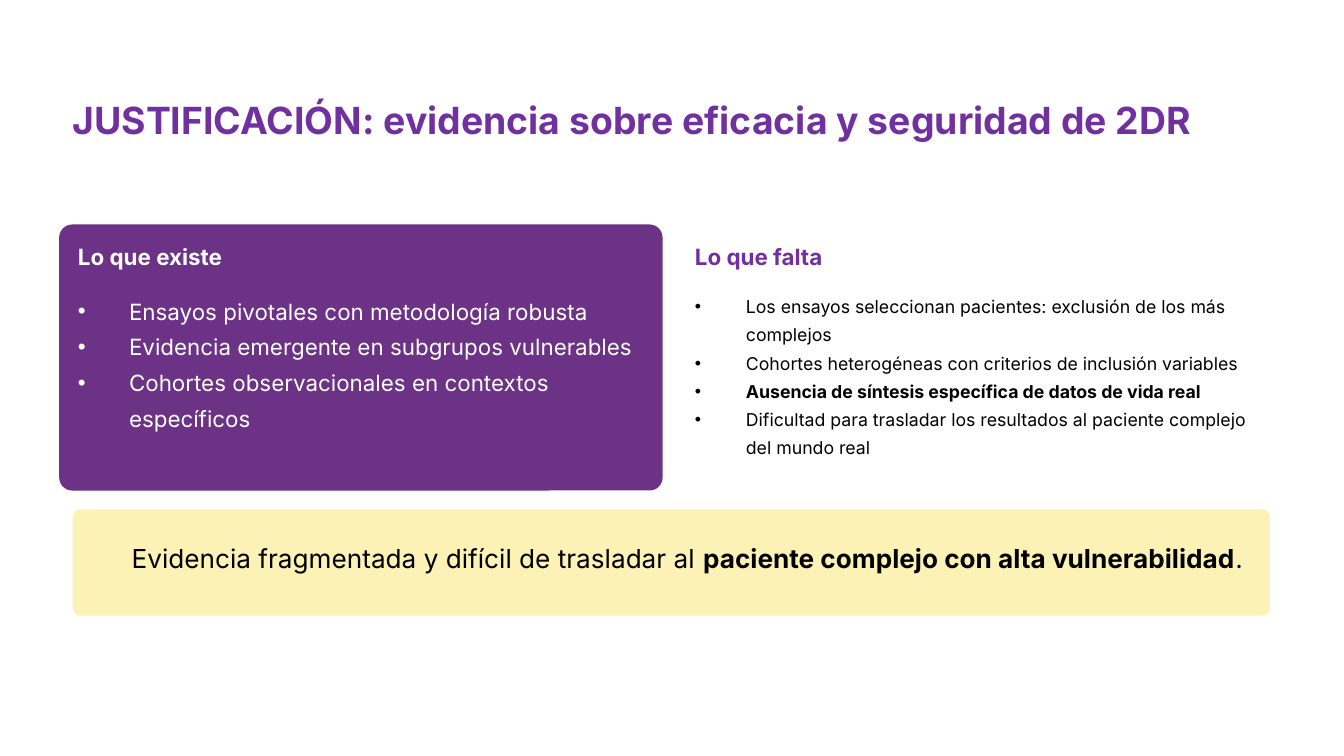
"""Build the slide on the evidence for 2DR: what exists, what is missing and the conclusion."""
from lxml import etree
from pptx import Presentation
from pptx.dml.color import RGBColor
from pptx.enum import shapes, text
from pptx.oxml import ns
from pptx.util import Inches, Pt

COLORS = {"title": "7030A0", "card": "6C3285", "banner": "FCF2B5",
          "light": "FFFFFF", "dark": "000000"}
TITLE = "JUSTIFICACIÓN: evidencia sobre eficacia y seguridad de 2DR"
COLUMNS = [
    {"heading": "Lo que existe", "heading_color": "light", "color": "light", "size": 12,
     "left": 0.58, "width": 4.22, "height": 0.96,
     "items": ["Ensayos pivotales con metodología robusta",
               "Evidencia emergente en subgrupos vulnerables",
               "Cohortes observacionales en contextos específicos"]},
    {"heading": "Lo que falta", "heading_color": "title", "color": "dark", "size": 9.5,
     "left": 5.17, "width": 4.29, "height": 1.44,
     "items": ["Los ensayos seleccionan pacientes: exclusión de los más complejos",
               "Cohortes heterogéneas con criterios de inclusión variables",
               [("Ausencia de síntesis específica de datos de vida real", True)],
               "Dificultad para trasladar los resultados al paciente complejo del mundo real"]},
]
CONCLUSION = [("Evidencia fragmentada y difícil de trasladar al ", False),
              ("paciente complejo con alta vulnerabilidad", True), (".", False)]
MARGIN, BANNER_WIDTH = 0.54, 8.91
HEADING_TOP, LIST_TOP = 1.8, 2.15
INDENT = 0.38


def place(sp, left, top, width, height):
    sp.left, sp.top, sp.width, sp.height = map(Inches, (left, top, width, height))


def add_bullet(p):
    pPr = p._p.get_or_add_pPr()
    pPr.set("marL", str(Inches(INDENT)))
    pPr.set("indent", str(-Inches(INDENT)))
    etree.SubElement(pPr, ns.qn("a:buFont")).set("typeface", "Arial")
    etree.SubElement(pPr, ns.qn("a:buChar")).set("char", "•")


def write(sp, paragraphs, *, size, color, bold=False, bullets=False, wrap=True, spacing=1.33):
    tf = sp.text_frame
    tf.auto_size = text.MSO_AUTO_SIZE.NONE
    tf.word_wrap = wrap
    tf.vertical_anchor = text.MSO_ANCHOR.TOP
    tf.margin_left = tf.margin_top = tf.margin_right = tf.margin_bottom = 0
    for i, runs in enumerate(paragraphs):
        p = tf.add_paragraph() if i else tf.paragraphs[0]
        if bullets:
            add_bullet(p)
        p.alignment = text.PP_ALIGN.LEFT
        p.line_spacing = spacing
        p.space_before = p.space_after = Pt(0)
        for words, strong in [(runs, bold)] if isinstance(runs, str) else runs:
            r = p.add_run()
            r.text = words
            r.font.name, r.font.size, r.font.bold = "Inter", Pt(size), strong
            r.font.color.rgb = RGBColor.from_string(COLORS[color])


def add_panel(s, color, radius, *box):
    sp = s.shapes.add_shape(shapes.MSO_SHAPE.ROUNDED_RECTANGLE, *map(Inches, box))
    sp.adjustments[0] = radius
    sp.shadow.inherit = False
    sp.fill.solid()
    sp.fill.fore_color.rgb = RGBColor.from_string(COLORS[color])
    sp.line.fill.background()
    return sp


def main():
    prs = Presentation()
    prs.slide_width = Inches(10)
    prs.slide_height = prs.slide_width * 9 // 16
    s = prs.slides.add_slide(prs.slide_layouts.get_by_name("Comparison"))
    title, *bodies = s.placeholders

    place(title, MARGIN, 0.71, BANNER_WIDTH, 0.42)
    write(title, [TITLE], size=20, color="title", bold=True, wrap=False, spacing=1.04)

    card = add_panel(s, "card", 0.049, 0.44, 1.67, 4.49, 1.98)
    title.element.addprevious(card.element)

    for column, heading, body in zip(COLUMNS, bodies[::2], bodies[1::2]):
        place(heading, column["left"], HEADING_TOP, 2.2, 0.21)
        write(heading, [column["heading"]], size=12, color=column["heading_color"],
              bold=True, wrap=False, spacing=1.04)
        place(body, column["left"], LIST_TOP, column["width"], column["height"])
        write(body, column["items"], size=column["size"], color=column["color"], bullets=True)

    add_panel(s, "banner", 0.072, MARGIN, 3.79, BANNER_WIDTH, 0.79)
    conclusion = s.shapes.add_textbox(*map(Inches, (0.98, 3.96, 8.34, 0.43)))
    write(conclusion, [CONCLUSION], size=14, color="dark")
    prs.save("out.pptx")


if __name__ == "__main__":
    main()
